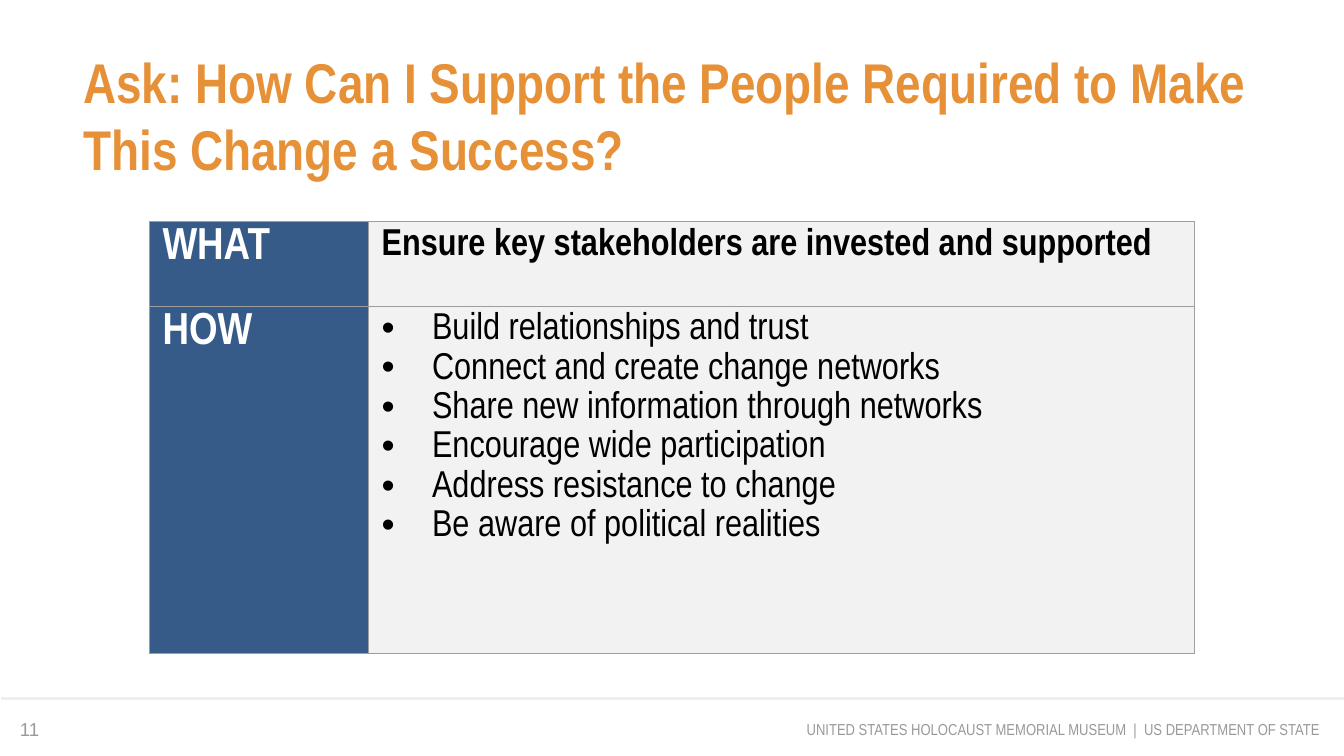
"""Build the slide on supporting the people a change depends on."""
from dataclasses import dataclass

from lxml import etree
from pptx import Presentation
from pptx import util as u
from pptx.dml.color import RGBColor
from pptx.enum import shapes, text
from pptx.oxml import ns

Pt = u.Pt


@dataclass(frozen=True)
class Theme:
    orange: str = "E69138"
    blue: str = "375B89"
    pale: str = "F2F2F2"
    rule: str = "EFEFEF"
    border: str = "9E9E9E"
    grey: str = "999999"
    white: str = "FFFFFF"
    black: str = "000000"
    narrow: str = "Arial Narrow"
    plain: str = "Arial"
    title_size: float = 30
    label_size: float = 24
    body_size: float = 20
    number_size: float = 10
    footer_size: float = 8.5


theme = Theme()


def format_runs(para, size, color, bold=False, face=theme.narrow):
    for span in para.runs:
        span.font.name = face
        span.font.size = Pt(size)
        span.font.bold = bold
        span.font.color.rgb = RGBColor.from_string(color)


def add_element(parent, tag, **attributes):
    return etree.SubElement(parent, ns.qn(tag), attributes)


deck = Presentation()
deck.slide_width, deck.slide_height = Pt(720), Pt(405)
page = deck.slides.add_slide(deck.slide_layouts[5])

footer_rule = page.shapes.add_connector(
    shapes.MSO_CONNECTOR.STRAIGHT, Pt(0.72), Pt(374.4), Pt(720), Pt(374.4)
)
footer_rule.line.color.rgb = RGBColor.from_string(theme.rule)
footer_rule.line.width = Pt(1.5)
add_element(footer_rule.element.spPr, "a:effectLst")

title = page.shapes.title
title.left, title.top, title.width, title.height = Pt(44.64), Pt(25.2), Pt(630), Pt(38.88)
frame = title.text_frame
frame.text = "Ask: How Can I Support the People Required to Make This Change a Success?"
frame.margin_left = frame.margin_right = frame.margin_top = frame.margin_bottom = 0
frame.word_wrap = True
frame.auto_size = text.MSO_AUTO_SIZE.NONE
frame.vertical_anchor = text.MSO_ANCHOR.TOP
frame.paragraphs[0].alignment = text.PP_ALIGN.LEFT
format_runs(frame.paragraphs[0], theme.title_size, theme.orange, bold=True)

small_texts = [
    ("UNITED STATES HOLOCAUST MEMORIAL MUSEUM\u00a0 |\u00a0 US DEPARTMENT OF STATE".replace("\u00a0", " "),
     (372.96, 375.12, 341.28, 30.96), text.MSO_ANCHOR.MIDDLE, text.PP_ALIGN.RIGHT,
     theme.footer_size, theme.narrow),
    ("11", (3.6, 371.52, 56.16, 30.96), text.MSO_ANCHOR.BOTTOM, text.PP_ALIGN.LEFT,
     theme.number_size, theme.plain),
]
for wording, place, anchor, alignment, size, face in small_texts:
    box = page.shapes.add_textbox(*map(Pt, place))
    frame = box.text_frame
    frame.text = wording
    frame.word_wrap = True
    frame.vertical_anchor = anchor
    frame.margin_left = frame.margin_right = frame.margin_top = frame.margin_bottom = Pt(7.2)
    frame.paragraphs[0].alignment = alignment
    format_runs(frame.paragraphs[0], size, theme.grey, face=face)

steps = [
    "Build relationships and trust",
    "Connect and create change networks",
    "Share new information through networks",
    "Encourage wide participation",
    "Address resistance to change",
    "Be aware of political realities",
]
rows = [
    ("WHAT", "Ensure key stakeholders are invested and supported"),
    ("HOW", "\n".join(steps)),
]
table = page.shapes.add_table(2, 2, Pt(79.92), Pt(118.8), Pt(560.16), Pt(231.12)).table
table.first_row = table.horz_banding = False
for column, width in zip(table.columns, (117.36, 442.8)):
    column.width = Pt(width)
for row, height in zip(table.rows, (45.36, 185.76)):
    row.height = Pt(height)

for row_index, row_texts in enumerate(rows):
    for column_index, wording in enumerate(row_texts):
        is_label = column_index == 0
        cell = table.cell(row_index, column_index)
        cell.text_frame.text = wording
        cell.margin_left = cell.margin_right = Pt(7.2)
        cell.margin_top = cell.margin_bottom = Pt(5.76)
        properties = cell._tc.get_or_add_tcPr()
        for side in ("a:lnL", "a:lnR", "a:lnT", "a:lnB"):
            line = add_element(properties, side, w=str(Pt(0.75)))
            add_element(add_element(line, "a:solidFill"), "a:srgbClr", val=theme.border)
        cell.fill.solid()
        cell.fill.fore_color.rgb = RGBColor.from_string(theme.blue if is_label else theme.pale)
        for para in cell.text_frame.paragraphs:
            para.line_spacing = 0.8
            format_runs(
                para,
                theme.label_size if is_label else theme.body_size,
                theme.white if is_label else theme.black,
                bold=is_label or row_index == 0,
            )

for para in table.cell(1, 1).text_frame.paragraphs:
    para.space_after = Pt(6)
    properties = para._p.get_or_add_pPr()
    properties.set("marL", str(Pt(27)))
    properties.set("indent", str(-Pt(27)))
    add_element(add_element(properties, "a:buClr"), "a:srgbClr", val=theme.black)
    add_element(properties, "a:buFont", typeface=theme.plain)
    add_element(properties, "a:buChar", char="•")

deck.save("out.pptx")
